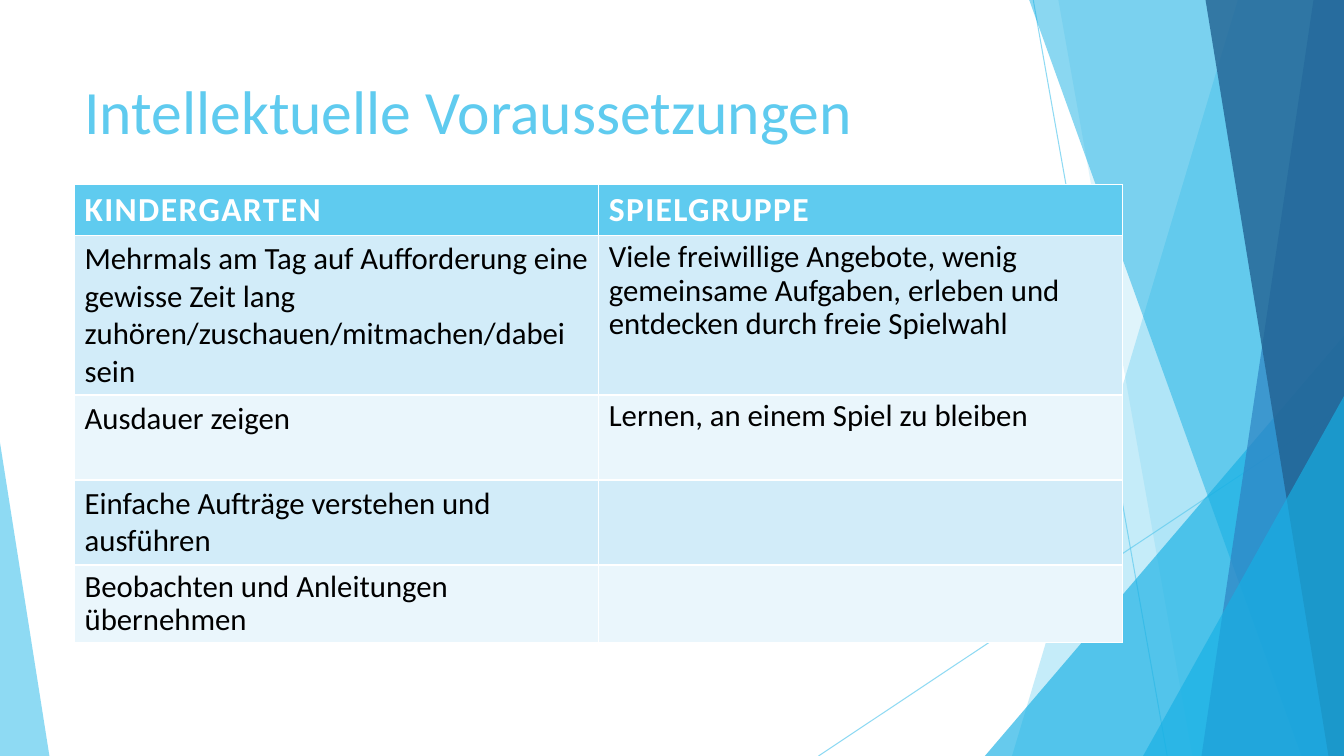
from dataclasses import dataclass

from lxml.etree import SubElement
from pptx import Presentation
from pptx.dml.color import RGBColor
from pptx.enum.shapes import MSO_CONNECTOR, MSO_SHAPE
from pptx.enum.text import MSO_ANCHOR
from pptx.oxml.ns import qn
from pptx.util import Inches, Pt


@dataclass(frozen=True)
class Theme:
    font: str = "Calibri"
    sky: str = "5FCBEF"
    cyan: str = "17B0E4"
    blue: str = "2E83C3"
    navy: str = "226292"
    white: str = "FFFFFF"
    black: str = "000000"
    bands: tuple = ("D2ECF9", "EAF6FC")
    title_size: int = 44
    header_size: int = 24
    body_size: int = 22


def paint(fill, color, opacity):
    """Fill with a solid colour; opacity is in percent."""
    fill.solid()
    fill.fore_color.rgb = RGBColor.from_string(color)
    color_node = fill._xPr.find(qn("a:solidFill"))[0]
    SubElement(color_node, qn("a:alpha"), val=str(opacity * 1000))


def add_span(para, text, size, color, bold=False):
    span = para.add_run()
    span.text = text
    span.font.name = theme.font
    span.font.size = Pt(size)
    span.font.bold = bold
    span.font.color.rgb = RGBColor.from_string(color)
    return span


theme = Theme()
deck = Presentation()
deck.slide_width, deck.slide_height = Inches(13.333), Inches(7.5)
page = deck.slides.add_slide(deck.slide_layouts[6])

# All lengths below are percentages of the slide's width and height
col, row = deck.slide_width / 100, deck.slide_height / 100

# Thin rays behind the facets
for x1, y1, x2, y2 in [(76.88, 0, 86.85, 100), (100, 53.73, 60.9, 100)]:
    ray = page.shapes.add_connector(
        MSO_CONNECTOR.STRAIGHT,
        int(x1 * col), int(y1 * row), int(x2 * col), int(y2 * row))
    ray.line.width = Pt(0.75)
    paint(ray.line.fill, theme.sky, 70)
    SubElement(ray._element.spPr, qn("a:effectLst"))

# Facets run from a top x to a bottom x and fill up to the right edge;
# spikes are triangles on the bottom edge: left, width, top, apex
decorations = [
    ("facet", (92.1, 75.3), theme.sky, 36),
    ("facet", (78.75, 88.73), theme.sky, 20),
    ("spike", (73.28, 26.72, 44.4, 1), theme.cyan, 66),
    ("facet", (76.58, 96.83), theme.cyan, 50),
    ("facet", (97.73, 89.4), theme.blue, 70),
    ("facet", (89.7, 98.85), theme.navy, 80),
    ("spike", (85.05, 14.95, 52.4, 1), theme.cyan, 66),
    ("spike", (0, 3.68, 58.53, 0), theme.sky, 70),
]
for kind, geometry, color, opacity in decorations:
    if kind == "facet":
        top_x, bottom_x = geometry
        outline = page.shapes.build_freeform(int(top_x * col), 0)
        outline.add_line_segments([
            (deck.slide_width, 0),
            (deck.slide_width, deck.slide_height),
            (int(bottom_x * col), deck.slide_height)])
        shape = outline.convert_to_shape()
    else:
        left, width, top, apex = geometry
        shape = page.shapes.add_shape(
            MSO_SHAPE.ISOSCELES_TRIANGLE, int(left * col), int(top * row),
            int(width * col), int((100 - top) * row))
        shape.adjustments[0] = apex
    paint(shape.fill, color, opacity)
    shape.line.fill.background()
    shape.shadow.inherit = False

# Title
left_edge = int(5.55 * col)
box = page.shapes.add_textbox(
    left_edge, int(8.93 * row), int(70.5 * col), int(19.2 * row))
box.text_frame.word_wrap = True
box.text_frame.vertical_anchor = MSO_ANCHOR.TOP
add_span(box.text_frame.paragraphs[0], "Intellektuelle Voraussetzungen",
         theme.title_size, theme.sky)

# Comparison table: each body cell is its text and its line spacing
headers = ("KINDERGARTEN", "SPIELGRUPPE")
body = [
    (("Mehrmals am Tag auf Aufforderung eine gewisse Zeit lang "
      "zuhören/zuschauen/mitmachen/dabei sein", 1),
     ("Viele freiwillige Angebote, wenig gemeinsame Aufgaben, erleben und "
      "entdecken durch freie Spielwahl", 0.9)),
    (("Ausdauer zeigen", 1), ("Lernen, an einem Spiel zu bleiben", 0.9)),
    (("Einfache Aufträge verstehen und ausführen", 1), None),
    (("Beobachten und Anleitungen übernehmen", 0.9), None),
]
row_heights = (6.75, 21.1, 11.25, 11.25, 10.3)
column_width = 39
table = page.shapes.add_table(
    len(row_heights), len(headers), left_edge, int(24.4 * row),
    int(len(headers) * column_width * col), int(sum(row_heights) * row)).table
for table_column in table.columns:
    table_column.width = int(column_width * col)
for table_row, height in zip(table.rows, row_heights):
    table_row.height = int(height * row)

for c, header in enumerate(headers):
    cell = table.cell(0, c)
    cell.fill.solid()
    cell.fill.fore_color.rgb = RGBColor.from_string(theme.sky)
    span = add_span(cell.text_frame.paragraphs[0], header,
                    theme.header_size, theme.white, bold=True)
    span.font._element.set("spc", "100")

for r, entries in enumerate(body):
    for c, entry in enumerate(entries):
        cell = table.cell(r + 1, c)
        cell.fill.solid()
        cell.fill.fore_color.rgb = RGBColor.from_string(theme.bands[r % 2])
        if entry:
            text, spacing = entry
            para = cell.text_frame.paragraphs[0]
            para.line_spacing = spacing
            add_span(para, text, theme.body_size, theme.black)

deck.save("out.pptx")
